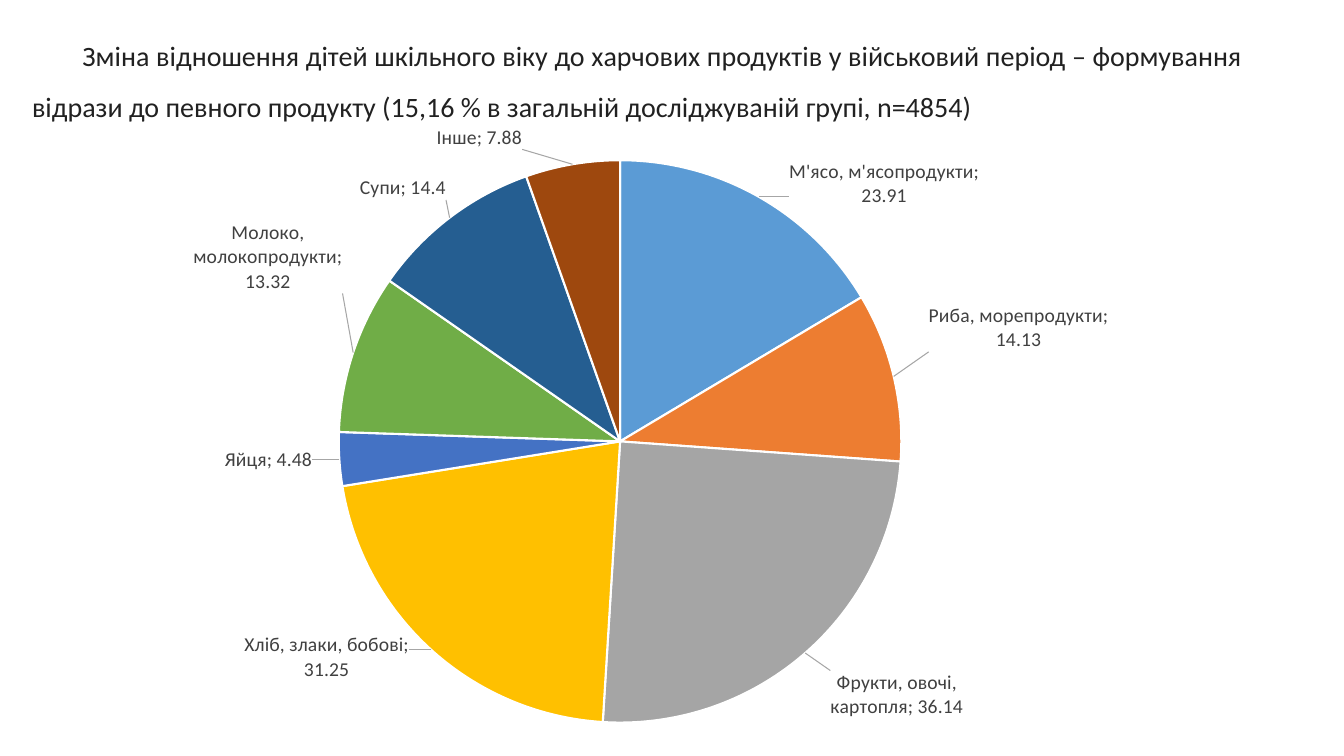
from lxml.etree import SubElement
from pptx import Presentation
from pptx.chart.data import CategoryChartData
from pptx.dml.color import RGBColor
from pptx.enum.chart import XL_CHART_TYPE, XL_LABEL_POSITION
from pptx.enum.text import MSO_AUTO_SIZE, PP_ALIGN
from pptx.oxml import parse_xml
from pptx.oxml.ns import nsdecls, qn
from pptx.util import Inches, Pt

TITLE = ("Зміна відношення дітей шкільного віку до харчових продуктів у військовий "
         "період – формування відрази до певного продукту (15,16 % в загальній "
         "досліджуваній групі, n=4854)")
FONT = "Calibri"
FRAME = (1.41, 1.11, 9.83, 6.39)
CENTER, RADIUS = (6.15, 4.38), 2.79

# name, value, colour, label shift in inches
FOODS = [
    ("М'ясо, м'ясопродукти", 23.91, "5B9BD5", (0.27, 0.16)),
    ("Риба, морепродукти", 14.13, "ED7D31", (0.29, -0.23)),
    ("Фрукти, овочі, картопля", 36.14, "A5A5A5", (0.21, 0.13)),
    ("Хліб, злаки, бобові", 31.25, "FFC000", (-0.18, -0.21)),
    (" Яйця", 4.48, "4472C4", (-0.21, 0)),
    ("Молоко, молокопродукти", 13.32, "70AD47", (-0.05, -0.57)),
    (" Супи", 14.4, "255E91", (0, -0.13)),
    (" Інше", 7.88, "9E480E", (-0.49, -0.09)),
]


def paint(color):
    return RGBColor.from_string(color)


def style(font, size, color):
    font.name, font.size = FONT, Pt(size)
    font.color.rgb = paint(color)


def write(slide, text, box, size, color, indent=0, spacing=1.0, after=0):
    shape = slide.shapes.add_textbox(*map(Inches, box))
    frame = shape.text_frame
    frame.word_wrap = True
    frame.auto_size = MSO_AUTO_SIZE.SHAPE_TO_FIT_TEXT
    para = frame.paragraphs[0]
    para.alignment = PP_ALIGN.JUSTIFY
    para.line_spacing, para.space_after = spacing, Pt(after)
    para._p.get_or_add_pPr().set("indent", str(Inches(indent)))
    run = para.add_run()
    run.text = text
    style(run.font, size, color)


def layout(x, y, extra=""):
    return parse_xml(f'<c:layout {nsdecls("c")}><c:manualLayout>{extra}'
                     f'<c:x val="{x:.4f}"/><c:y val="{y:.4f}"/>'
                     '</c:manualLayout></c:layout>')


def place_plot(chart):
    left, top, width, height = FRAME
    area = chart._chartSpace.chart.plotArea
    for old in area.findall(qn("c:layout")):
        area.remove(old)
    node = layout((CENTER[0] - RADIUS - left) / width,
                  (CENTER[1] - RADIUS - top) / height,
                  '<c:layoutTarget val="inner"/><c:xMode val="edge"/>'
                  '<c:yMode val="edge"/>')
    for tag, side in (("c:w", width), ("c:h", height)):
        SubElement(node[0], qn(tag)).set("val", f"{2 * RADIUS / side:.4f}")
    area.insert(0, node)


def add_pie(slide):
    data = CategoryChartData()
    data.categories = [food[0] for food in FOODS]
    data.add_series("Series 1", [food[1] for food in FOODS])
    chart = slide.shapes.add_chart(
        XL_CHART_TYPE.PIE, *map(Inches, FRAME), data).chart
    chart.has_legend = chart.has_title = False
    style(chart.font, 10, "000000")
    plot = chart.plots[0]
    plot.vary_by_categories = True
    place_plot(chart)

    series = plot.series[0]
    labels = series.data_labels
    labels.show_value = labels.show_category_name = True
    labels.position = XL_LABEL_POSITION.OUTSIDE_END
    style(labels.font, 14, "404040")
    for i, (_, _, color, shift) in enumerate(FOODS):
        point = series.points[i]
        point.format.fill.solid()
        point.format.fill.fore_color.rgb = paint(color)
        point.format.line.color.rgb = paint("FFFFFF")
        point.format.line.width = Pt(1.5)
        label = point.data_label
        label.position = XL_LABEL_POSITION.OUTSIDE_END
        style(label.font, 14, "404040")

    group = labels._element
    for node, food in zip(group.findall(qn("c:dLbl")), FOODS):
        x, y = food[3]
        node.insert(1, layout(x / FRAME[2], y / FRAME[3]))
        node.find(qn("c:showCatName")).set("val", "1")
        node.find(qn("c:showVal")).set("val", "1")
        SubElement(node, qn("c:separator")).text = "; "
    for old in group.findall(qn("c:showLeaderLines")):
        group.remove(old)
    SubElement(group, qn("c:separator")).text = "; "
    SubElement(group, qn("c:showLeaderLines")).set("val", "1")
    group.append(parse_xml(
        f'<c:leaderLines {nsdecls("c", "a")}><c:spPr><a:ln w="9525"><a:solidFill>'
        '<a:srgbClr val="A6A6A6"/></a:solidFill></a:ln></c:spPr></c:leaderLines>'))


def main():
    """Build the slide with the food aversion pie."""
    deck = Presentation()
    deck.slide_width, deck.slide_height = Inches(13.33), Inches(7.5)
    slide = deck.slides.add_slide(deck.slide_layouts[6])
    add_pie(slide)
    write(slide, TITLE, (0.22, 0.17, 12.2, 1.06), 20, "212121",
          indent=0.5, spacing=1.5, after=8)
    deck.save("out.pptx")


if __name__ == "__main__":
    main()
